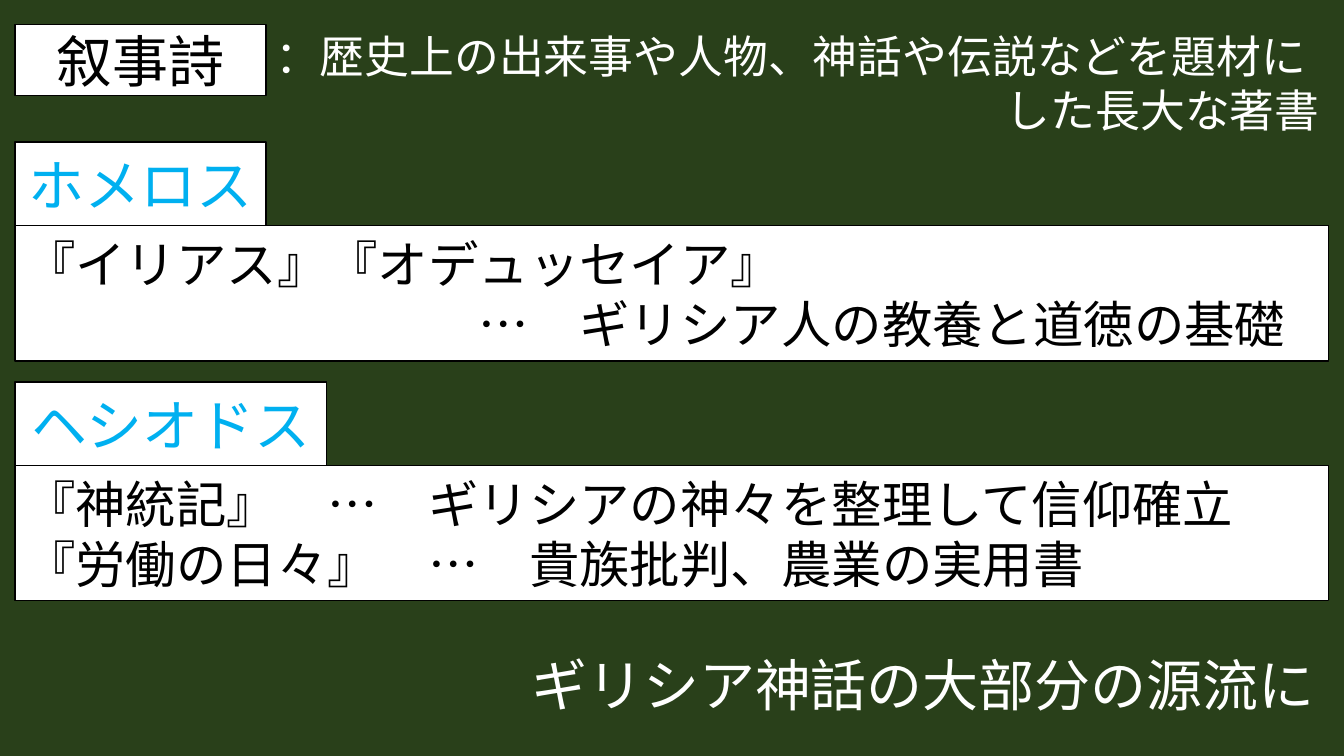
from pptx import Presentation
from pptx.dml.color import RGBColor
from pptx.enum.shapes import MSO_SHAPE
from pptx.enum.text import MSO_ANCHOR, MSO_AUTO_SIZE, PP_ALIGN
from pptx.util import Inches, Pt

GREEN, WHITE, BLACK, BLUE = "29401A", "FFFFFF", "000000", "00B0F0"
LEFT, CENTER, RIGHT = PP_ALIGN.LEFT, PP_ALIGN.CENTER, PP_ALIGN.RIGHT
MARGIN = 0.15
PANEL_WIDTH, PANEL_HEIGHT = 13.03, 1.34
LABEL_HEIGHT = 0.83

# Lines are (text, alignment, left indent in inches)
TERM = "叙事詩"
DEFINITION = [
    ("：歴史上の出来事や人物、神話や伝説などを題材に", LEFT, 0),
    ("した長大な著書", RIGHT, 0),
]
# Poets are (name, top, label width, lines about the works)
POETS = [
    ("ホメロス", 1.41, 2.49, [
        ("『イリアス』『オデュッセイア』", LEFT, 0),
        ("…　ギリシア人の教養と道徳の基礎", LEFT, 4.5),
    ]),
    ("ヘシオドス", 3.79, 3.09, [
        ("『神統記』　…　ギリシアの神々を整理して信仰確立", LEFT, 0),
        ("『労働の日々』　…　貴族批判、農業の実用書", LEFT, 0),
    ]),
]
CONCLUSION = [("ギリシア神話の大部分の源流に", LEFT, 0)]


def rgb(color):
    return RGBColor.from_string(color)


def write_lines(text_frame, lines, size, color):
    text_frame.word_wrap = True
    text_frame.text = "\n".join(text for text, _, _ in lines)
    for paragraph, (_, alignment, indent) in zip(text_frame.paragraphs, lines):
        paragraph.alignment = alignment
        if indent:
            properties = paragraph._p.get_or_add_pPr()
            properties.set("marL", str(Inches(indent)))
            properties.set("indent", "0")
        for run in paragraph.runs:
            run.font.name = "Calibri"
            run.font.size = Pt(size)
            run.font.color.rgb = rgb(color)


def add_box(slide, box, lines, size, color):
    """Add a white rectangle with a thin black outline."""
    shape = slide.shapes.add_shape(MSO_SHAPE.RECTANGLE, *map(Inches, box))
    shape.shadow.inherit = False
    shape.fill.solid()
    shape.fill.fore_color.rgb = rgb(WHITE)
    shape.line.color.rgb = rgb(BLACK)
    shape.line.width = Pt(1)
    shape.text_frame.vertical_anchor = MSO_ANCHOR.MIDDLE
    write_lines(shape.text_frame, lines, size, color)


def add_text(slide, box, lines, size):
    """Add white text directly on the background."""
    text_frame = slide.shapes.add_textbox(*map(Inches, box)).text_frame
    write_lines(text_frame, lines, size, WHITE)
    text_frame.auto_size = MSO_AUTO_SIZE.SHAPE_TO_FIT_TEXT


presentation = Presentation()
presentation.slide_width = Inches(13.33)
presentation.slide_height = Inches(7.5)
slide = presentation.slides.add_slide(presentation.slide_layouts[6])
slide.background.fill.solid()
slide.background.fill.fore_color.rgb = rgb(GREEN)

add_box(slide, (MARGIN, 0.24, 2.49, 0.71), [(TERM, CENTER, 0)], 40, BLACK)
add_text(slide, (2.63, 0.24, 10.56, 1.18), DEFINITION, 32)
for name, top, width, works in POETS:
    add_box(slide, (MARGIN, top, width, LABEL_HEIGHT), [(name, CENTER, 0)], 40, BLUE)
    panel = (MARGIN, top + LABEL_HEIGHT, PANEL_WIDTH, PANEL_HEIGHT)
    add_box(slide, panel, works, 36, BLACK)
add_text(slide, (5.17, 6.4, 8.25, 0.77), CONCLUSION, 40)

presentation.save("out.pptx")
